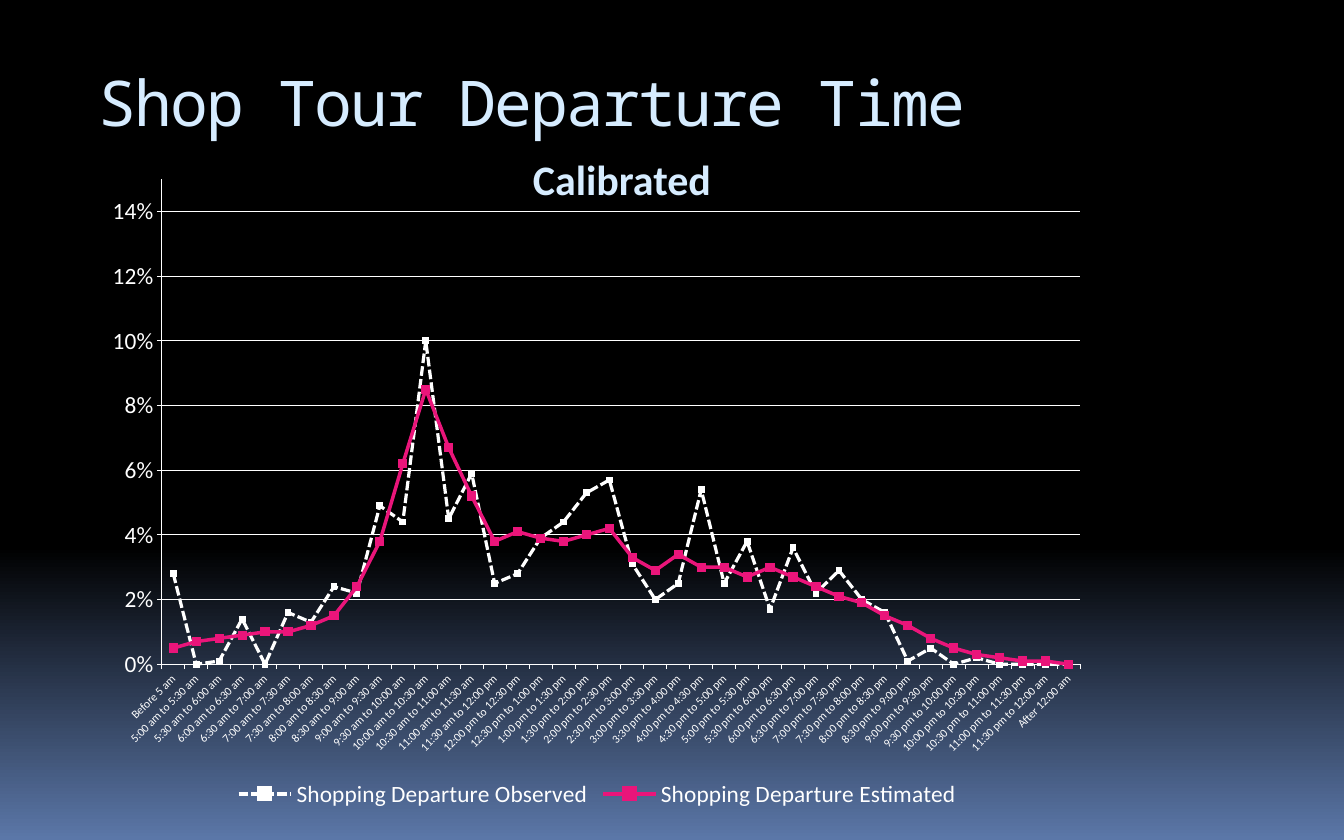
from copy import deepcopy

from lxml.etree import SubElement
from pptx import Presentation
from pptx.chart.data import CategoryChartData
from pptx.dml.color import RGBColor
from pptx.enum.chart import XL_CHART_TYPE as ChartType
from pptx.enum.chart import XL_LEGEND_POSITION as LegendPosition
from pptx.enum.chart import XL_MARKER_STYLE as Marker
from pptx.enum.chart import XL_TICK_MARK as Tick
from pptx.enum.dml import MSO_LINE as Dash
from pptx.enum.text import MSO_ANCHOR as Anchor
from pptx.enum.text import PP_ALIGN as Align
from pptx.oxml import parse_xml
from pptx.oxml.ns import nsdecls, qn
from pptx.util import Inches, Pt

COLORS = {"black": "000000", "blue": "5B77A8", "pale": "D6ECFF",
          "white": "FFFFFF", "pink": "EA157A"}
BACKGROUND = [(0, "black"), (0.65, "black"), (1, "blue")]
TEXTS = [
    {"text": "Shop Tour Departure Time", "at": (1.02, 0.75, 14.2, 1.33),
     "insets": (0.15, 0.07), "align": Align.LEFT, "spacing": 0.95, "tracking": -150,
     "font": {"name": "Noto Sans Mono", "size": Pt(54), "bold": False}},
    {"text": "Calibrated", "at": (6.1, 1.78, 2.61, 0.71),
     "insets": (0.1, 0.05), "align": Align.CENTER, "spacing": 1.0, "tracking": 0,
     "font": {"name": "Calibri", "size": Pt(36), "bold": True}},
]
CHART_AT = (1.11, 1.98, 12, 7.7)
PLOT_LAYOUT = {"x": 0.068, "y": 0.02, "w": 0.911, "h": 0.75}
SERIES = [
    {"name": "Shopping Departure Observed", "color": "white", "width": 2.75,
     "dash": Dash.SQUARE_DOT, "marker": 5,
     "values": [0.028, 0, 0.001, 0.014, 0, 0.016, 0.013, 0.024, 0.022, 0.049,
                0.044, 0.1, 0.045, 0.059, 0.025, 0.028, 0.039, 0.044, 0.053, 0.057,
                0.031, 0.02, 0.025, 0.054, 0.025, 0.038, 0.017, 0.036, 0.022, 0.029,
                0.02, 0.016, 0.001, 0.005, 0, 0.002, 0, 0, 0, 0]},
    {"name": "Shopping Departure Estimated", "color": "pink", "width": 3,
     "dash": Dash.SOLID, "marker": 7,
     "values": [0.005, 0.007, 0.008, 0.009, 0.01, 0.01, 0.012, 0.015, 0.024, 0.038,
                0.062, 0.085, 0.067, 0.052, 0.038, 0.041, 0.039, 0.038, 0.04, 0.042,
                0.033, 0.029, 0.034, 0.03, 0.03, 0.027, 0.03, 0.027, 0.024, 0.021,
                0.019, 0.015, 0.012, 0.008, 0.005, 0.003, 0.002, 0.001, 0.001, 0]},
]


def rgb(name):
    return RGBColor.from_string(COLORS[name])


def clock(half_hours):
    """Write a count of half hours since midnight as a 12-hour time."""
    hour, half = divmod(half_hours, 2)
    return f"{(hour - 1) % 12 + 1}:{half * 30:02d} {'am' if hour % 24 < 12 else 'pm'}"


def set_all(target, values):
    for key, value in values.items():
        setattr(target, key, value)


def paint_line(line, color, width):
    line.color.rgb = rgb(color)
    line.width = Pt(width)


def paint_background(slide):
    fill = slide.background.fill
    fill.gradient()
    fill.gradient_angle = 270
    stop_list = slide.element.find(".//" + qn("a:gsLst"))
    stop_list.insert(1, deepcopy(stop_list[0]))
    for stop, (position, color) in zip(fill.gradient_stops, BACKGROUND):
        stop.position = position
        stop.color.rgb = rgb(color)


def add_text(slide, item):
    box = slide.shapes.add_textbox(*map(Inches, item["at"]))
    side, end = map(Inches, item["insets"])
    set_all(box.text_frame, {"word_wrap": True, "vertical_anchor": Anchor.TOP,
                             "margin_left": side, "margin_right": side,
                             "margin_top": end, "margin_bottom": end})
    para = box.text_frame.paragraphs[0]
    set_all(para, {"alignment": item["align"], "line_spacing": item["spacing"]})
    span = para.add_run()
    span.text = item["text"]
    set_all(span.font, item["font"])
    span.font.color.rgb = rgb("pale")
    span.font._element.set("spc", str(item["tracking"]))


def place_plot(chart):
    """Fix the inner plot area and leave the chart see-through."""
    space = chart._chartSpace
    plot_area = space.find(".//" + qn("c:plotArea"))
    for layout in plot_area.findall(qn("c:layout")):
        plot_area.remove(layout)
    layout = parse_xml(f"<c:layout {nsdecls('c')}/>")
    manual = SubElement(layout, qn("c:manualLayout"))
    settings = {"layoutTarget": "inner", "xMode": "edge", "yMode": "edge", **PLOT_LAYOUT}
    for key, value in settings.items():
        SubElement(manual, qn("c:" + key)).set("val", str(value))
    plot_area.insert(0, layout)
    clear = parse_xml(f"<c:spPr {nsdecls('c', 'a')}><a:noFill/><a:ln><a:noFill/></a:ln></c:spPr>")
    plot_area.append(clear)
    space.find(qn("c:chart")).addnext(deepcopy(clear))


def format_axes(chart):
    times, shares = chart.category_axis, chart.value_axis
    for axis, size in ((times, 10), (shares, 20)):
        axis.major_tick_mark = Tick.OUTSIDE
        axis.minor_tick_mark = Tick.NONE
        paint_line(axis.format.line, "white", 0.75)
        set_all(axis.tick_labels.font, {"size": Pt(size), "name": "Calibri"})
        axis.tick_labels.font.color.rgb = rgb("white")
    times.has_major_gridlines = False
    times._element.find(qn("c:txPr")).find(qn("a:bodyPr")).set("rot", "-2700000")
    set_all(shares, {"minimum_scale": 0, "maximum_scale": 0.15, "major_unit": 0.02,
                     "has_major_gridlines": True})
    set_all(shares.tick_labels, {"number_format": "0%", "number_format_is_linked": False})
    paint_line(shares.major_gridlines.format.line, "white", 0.75)


def add_departure_chart(slide):
    data = CategoryChartData(number_format="0.0%")
    slots = [f"{clock(start)} to {clock(start + 1)}" for start in range(10, 48)]
    data.categories = ["Before 5 am", *slots, "After 12:00 am"]
    for item in SERIES:
        data.add_series(item["name"], item["values"])
    chart = slide.shapes.add_chart(ChartType.LINE_MARKERS, *map(Inches, CHART_AT), data).chart
    set_all(chart, {"has_title": False, "has_legend": True})
    set_all(chart.font, {"name": "Calibri", "size": Pt(10)})
    chart.font.color.rgb = rgb("white")
    set_all(chart.legend, {"position": LegendPosition.BOTTOM, "include_in_layout": False})
    set_all(chart.legend.font, {"name": "Calibri", "size": Pt(20)})
    chart.legend.font.color.rgb = rgb("white")
    chart.plots[0].vary_by_categories = False
    for series, item in zip(chart.plots[0].series, SERIES):
        series.smooth = False
        paint_line(series.format.line, item["color"], item["width"])
        series.format.line.dash_style = item["dash"]
        set_all(series.marker, {"style": Marker.SQUARE, "size": item["marker"]})
        series.marker.format.fill.solid()
        series.marker.format.fill.fore_color.rgb = rgb(item["color"])
        paint_line(series.marker.format.line, item["color"], 0.75)
    format_axes(chart)
    place_plot(chart)


def main():
    deck = Presentation()
    deck.slide_width, deck.slide_height = Inches(16), Inches(10)
    page = deck.slides.add_slide(deck.slide_layouts[6])
    paint_background(page)
    title, subtitle = TEXTS
    add_text(page, title)
    add_departure_chart(page)
    add_text(page, subtitle)
    deck.save("out.pptx")


if __name__ == "__main__":
    main()
